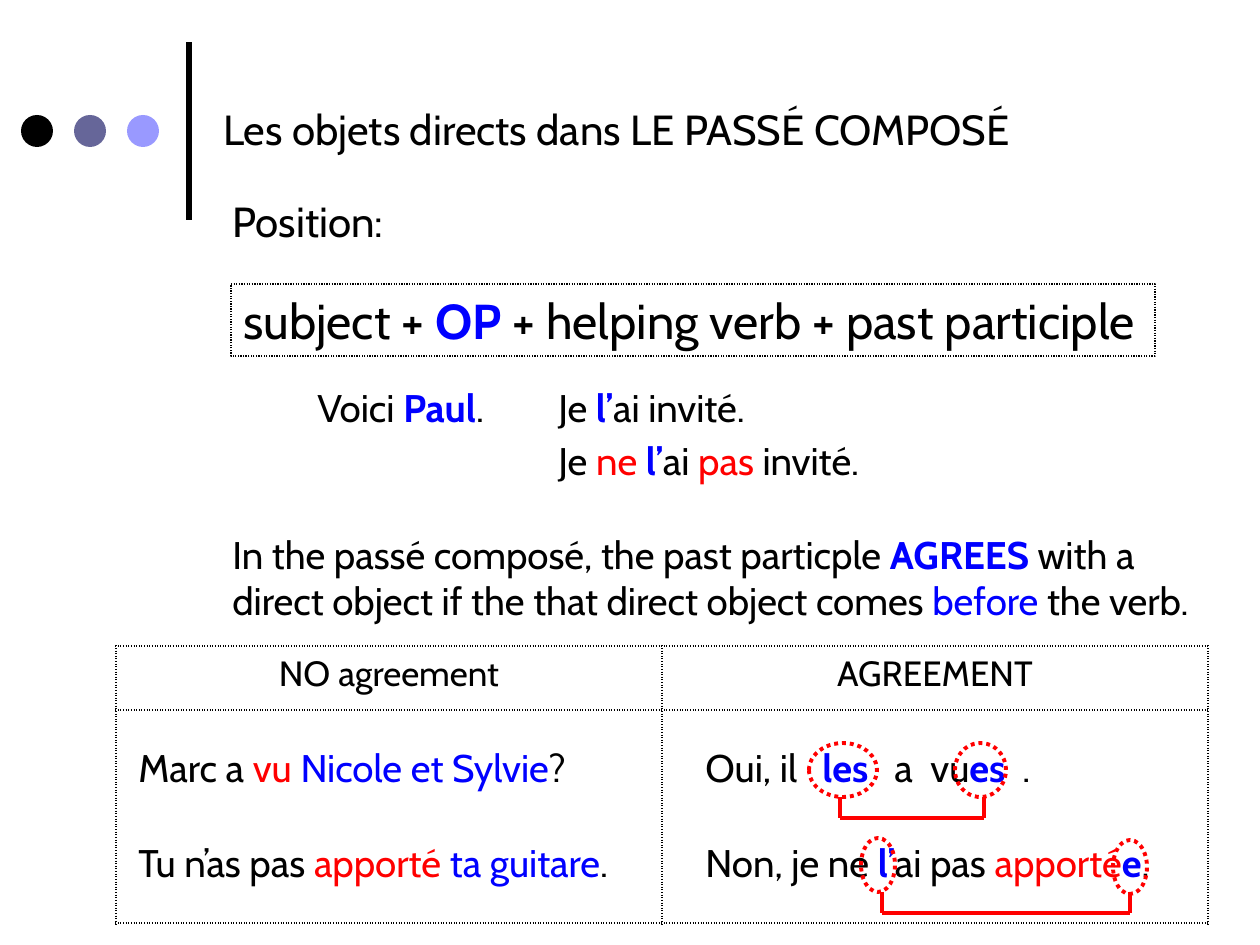
from lxml import etree
from pptx import Presentation
from pptx.dml.color import RGBColor
from pptx.enum.dml import MSO_LINE
from pptx.enum.shapes import MSO_CONNECTOR, MSO_SHAPE
from pptx.enum.text import PP_ALIGN
from pptx.oxml.ns import qn
from pptx.util import Emu, Pt

OVAL = MSO_SHAPE.OVAL
STRAIGHT = MSO_CONNECTOR.STRAIGHT
DOTTED = MSO_LINE.ROUND_DOT
LEFT, CENTER = PP_ALIGN.LEFT, PP_ALIGN.CENTER
EMU_PER_PX = 914400 / 126

BLACK = RGBColor(0x00, 0x00, 0x00)
BLUE = RGBColor(0x00, 0x00, 0xFF)
RED = RGBColor(0xFF, 0x00, 0x00)
SLATE = RGBColor(0x66, 0x66, 0x99)
LILAC = RGBColor(0x99, 0x99, 0xFF)


def px(*lengths):
    return [Emu(round(length * EMU_PER_PX)) for length in lengths]


def write(frame, *runs, size=22, align=LEFT, spacing=0, tabs=()):
    """Fill a text frame; a run is plain text or (text, colour, bold)."""
    frame.word_wrap = True
    paragraph = frame.paragraphs[0]
    paragraph.alignment = align
    if spacing:
        paragraph.space_before = paragraph.space_after = Pt(spacing)
    if tabs:
        tab_list = etree.SubElement(paragraph._p.get_or_add_pPr(), qn("a:tabLst"))
        for stop in px(*tabs):
            etree.SubElement(tab_list, qn("a:tab"), pos=str(stop), algn="l")
    for item in runs:
        text, color, bold = (item, BLACK, False) if isinstance(item, str) else item
        run = paragraph.add_run()
        run.text = text
        run.font.name = "Cabin"
        run.font.size = Pt(size)
        run.font.bold = bold
        run.font.color.rgb = color


prs = Presentation()
prs.slide_width, prs.slide_height = px(1260, 945)
slide = prs.slides.add_slide(prs.slide_layouts[6])
shapes = slide.shapes

# Title ornament
title_bar = shapes.add_connector(STRAIGHT, *px(189, 220, 189, 42))
title_bar.line.color.rgb = BLACK
title_bar.line.width = Pt(3)
etree.SubElement(title_bar._element.spPr, qn("a:effectLst"))
for i, color in enumerate((BLACK, SLATE, LILAC)):
    dot = shapes.add_shape(OVAL, *px(21 + 53 * i, 115, 32, 32))
    dot.shadow.inherit = False
    dot.fill.solid()
    dot.fill.fore_color.rgb = color
    dot.line.fill.background()

# Headings and rule
title = shapes.add_textbox(*px(211, 97, 945, 64))
write(title.text_frame, "Les objets directs dans LE PASSÉ COMPOSÉ", size=24)
position = shapes.add_textbox(*px(220, 189, 400, 63))
write(position.text_frame, "Position:", size=24)

formula = shapes.add_textbox(*px(231, 284, 924, 72))
formula.line.color.rgb = BLACK
formula.line.width = Pt(0.75)
formula.line.dash_style = DOTTED
write(formula.text_frame, "subject + ", ("OP", BLUE, True),
      " + helping verb + past participle", size=28, spacing=12)

agreement_rule = shapes.add_textbox(*px(220, 525, 1008, 106))
write(agreement_rule.text_frame, "In the passé composé, the past particple ",
      ("AGREES", BLUE, True), " with a direct object if the that direct object comes ",
      ("before", BLUE, False), " the verb.")

# Agreement table
table = shapes.add_table(2, 2, *px(116, 646, 1092, 277)).table
table.first_row = table.horz_banding = False
for column, width in zip(table.columns, px(546, 546)):
    column.width = width
for row, height in zip(table.rows, px(64, 213)):
    row.height = height
for cell in table.iter_cells():
    properties = cell._tc.get_or_add_tcPr()
    for side in ("lnL", "lnR", "lnT", "lnB"):
        border = etree.SubElement(properties, qn(f"a:{side}"), w=str(Pt(1)))
        border_fill = etree.SubElement(border, qn("a:solidFill"))
        etree.SubElement(border_fill, qn("a:srgbClr"), val=str(BLACK))
        etree.SubElement(border, qn("a:prstDash"), val="sysDot")
    cell.fill.background()
for column, heading in enumerate(("NO agreement", "AGREEMENT")):
    write(table.cell(0, column).text_frame, heading, size=20, align=CENTER)

# Example sentences
examples = [
    (305, 378, 199, ["Voici ", ("Paul", BLUE, True), "."]),
    (546, 378, 504, ["Je ", ("l’", BLUE, True), "ai invité."]),
    (546, 431, 536, ["Je ", ("ne ", RED, False), ("l’", BLUE, True), "ai ",
                     ("pas ", RED, False), "invité."]),
    (126, 738, 473, ["Marc a ", ("vu ", RED, False),
                     ("Nicole et Sylvie", BLUE, False), "?"]),
    (126, 833, 525, ["Tu n’as pas ", ("apporté ", RED, False),
                     ("ta guitare", BLUE, False), "."]),
]
for left, top, width, runs in examples:
    sentence = shapes.add_textbox(*px(left, top, width, 59))
    write(sentence.text_frame, *runs, spacing=12)

# Answers: text top, runs, tab stops, circles (left, top, width), bracket (left, right)
answers = [
    (833, ["Non, je ne ", ("l’", BLUE, True), "ai pas ", ("apporté", RED, False),
           ("e", BLUE, True), "."], (),
     [(861, 838, 34), (1113, 840, 34)], (882, 1130)),
    (738, ["Oui, il\t", ("les", BLUE, True), "\ta\tvu", ("es", BLUE, True), "\t."],
     (117, 189, 225, 317),
     [(955, 743, 51), (809, 743, 68)], (840, 984)),
]
for top, runs, tabs, circles, (start, end) in answers:
    group = shapes.add_group_shape().shapes
    answer = group.add_textbox(*px(693, top, 473, 59))
    write(answer.text_frame, *runs, spacing=12, tabs=tabs)
    for left, circle_top, width in circles:
        circle = group.add_shape(OVAL, *px(left, circle_top, width, 54))
        circle.shadow.inherit = False
        circle.fill.background()
        circle.line.color.rgb = RED
        circle.line.width = Pt(2.25)
        circle.line.dash_style = DOTTED
    upper, lower = top + 59, top + 80
    for ends in ((start, upper, start, lower), (end, lower, start, lower),
                 (end, upper, end, lower)):
        bracket = group.add_connector(STRAIGHT, *px(*ends))
        bracket.line.color.rgb = RED
        bracket.line.width = Pt(2.25)
        etree.SubElement(bracket._element.spPr, qn("a:effectLst"))

prs.save("out.pptx")
